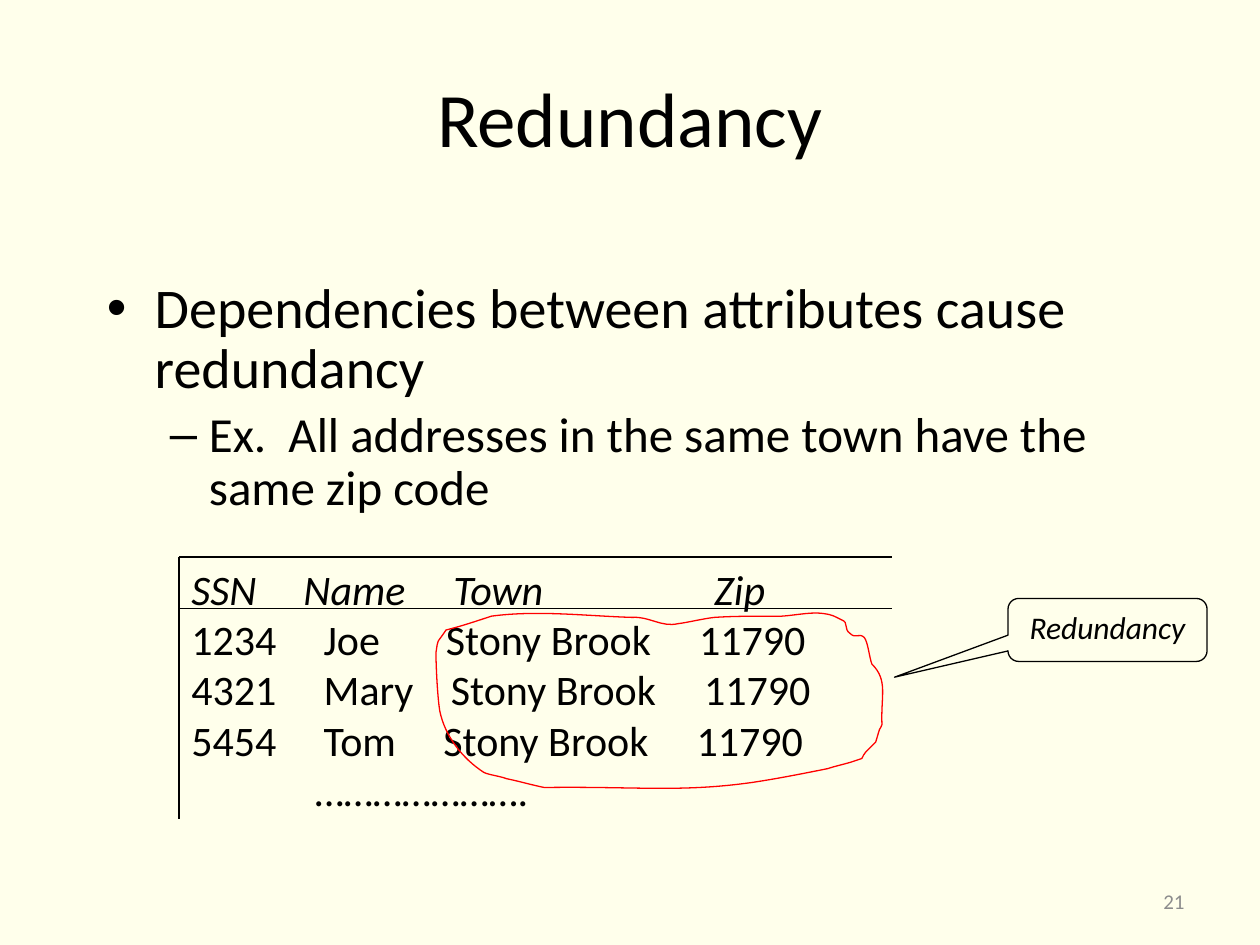
from typing import NamedTuple

from lxml import etree
from pptx import Presentation
from pptx.dml.color import RGBColor
from pptx.enum.shapes import MSO_CONNECTOR, MSO_SHAPE
from pptx.enum.text import MSO_ANCHOR, PP_ALIGN
from pptx.oxml.ns import qn
from pptx.util import Inches, Pt

BLACK = RGBColor(0x00, 0x00, 0x00)
GRAY = RGBColor(0x8C, 0x8C, 0x8C)
RED = RGBColor(0xFF, 0x00, 0x00)
CREAM = RGBColor(0xFF, 0xFF, 0xEB)
FONT = "Calibri"
LINE_WIDTH = Pt(0.75)

TABLE_LEFT, TABLE_RIGHT = 1.42, 7.08
TABLE_TOP, HEADER_BOTTOM, TABLE_BOTTOM = 4.42, 4.83, 6.5


class Bullet(NamedTuple):
    text: str
    symbol: str
    size: int
    margin: float
    hanging: float
    level: int


class Row(NamedTuple):
    text: str
    stops: tuple
    italic: bool = False


class Rule(NamedTuple):
    left: float
    top: float
    right: float
    bottom: float


BULLETS = [
    Bullet("Dependencies between attributes cause redundancy", "•", 32, 0.38, 0.38, 0),
    Bullet("Ex.  All addresses in the same town have the same zip code", "–", 28, 0.81, 0.31, 1),
]

ROWS = [
    Row("SSN\tName\tTown\tZip", (0.89, 2.08, 4.15), italic=True),
    Row("1234\tJoe\tStony Brook\t11790", (1.05, 2.02, 4.03)),
    Row("4321\tMary\tStony Brook\t11790", (1.05, 2.06, 4.07)),
    Row("5454\tTom\tStony Brook\t11790", (1.05, 2.0, 4.01)),
    Row("\t………………….", (0.98,)),
]

RULES = [
    Rule(TABLE_LEFT, HEADER_BOTTOM, TABLE_RIGHT, HEADER_BOTTOM),
    Rule(TABLE_LEFT, TABLE_TOP, TABLE_LEFT, TABLE_BOTTOM),
    Rule(TABLE_LEFT, TABLE_TOP, TABLE_RIGHT, TABLE_TOP),
]

# Each curve gives two control points and an end point.
LOOP_START = (6.92, 5.27)
LOOP_CURVES = [
    ((6.9, 5.22), (6.89, 5.1), (6.86, 5.06)),
    ((6.82, 5.02), (6.79, 5.07), (6.75, 5.03)),
    ((6.69, 4.99), (6.74, 4.94), (6.68, 4.92)),
    ((6.62, 4.89), (6.61, 4.88), (6.54, 4.87)),
    ((6.42, 4.85), (6.25, 4.9), (6.13, 4.89)),
    ((5.98, 4.89), (5.81, 4.89), (5.67, 4.9)),
    ((5.58, 4.91), (5.46, 4.94), (5.38, 4.95)),
    ((5.25, 4.98), (5.15, 4.89), (5.02, 4.9)),
    ((4.67, 4.89), (4.27, 4.84), (3.9, 4.89)),
    ((3.78, 4.93), (3.66, 4.97), (3.54, 5)),
    ((3.46, 5.12), (3.48, 5.06), (3.46, 5.18)),
    ((3.46, 5.26), (3.47, 5.51), (3.49, 5.64)),
    ((3.53, 5.84), (3.67, 6.02), (3.84, 6.13)),
    ((3.88, 6.15), (3.97, 6.16), (4.02, 6.18)),
    ((4.12, 6.2), (4.22, 6.23), (4.32, 6.25)),
    ((5.05, 6.24), (5.4, 6.29), (5.97, 6.21)),
    ((6.17, 6.18), (6.37, 6.14), (6.57, 6.1)),
    ((6.63, 6.08), (6.68, 6.07), (6.75, 6.05)),
    ((6.78, 6.04), (6.84, 6.02), (6.84, 6.02)),
    ((6.85, 6), (6.86, 5.98), (6.87, 5.97)),
    ((6.9, 5.94), (6.95, 5.89), (6.95, 5.89)),
    ((6.96, 5.86), (6.97, 5.82), (6.98, 5.79)),
    ((6.99, 5.78), (7, 5.75), (7, 5.75)),
    ((6.99, 5.52), (7.05, 5.4), LOOP_START),
]


def write(paragraph, text: str, *, size: int, color=BLACK, italic=False, align=PP_ALIGN.LEFT):
    paragraph.alignment = align
    run = paragraph.add_run()
    run.text = text
    run.font.name = FONT
    run.font.size = Pt(size)
    run.font.italic = italic
    run.font.color.rgb = color


def add_text_frame(slide, left: float, top: float, width: float, height: float):
    box = slide.shapes.add_textbox(Inches(left), Inches(top), Inches(width), Inches(height))
    box.text_frame.word_wrap = True
    return box.text_frame


def next_paragraph(text_frame, index: int):
    return text_frame.add_paragraph() if index else text_frame.paragraphs[0]


def add_bullets(slide) -> None:
    text_frame = add_text_frame(slide, 0.75, 2.17, 8.5, 2.25)
    for index, bullet in enumerate(BULLETS):
        paragraph = next_paragraph(text_frame, index)
        write(paragraph, bullet.text, size=bullet.size)
        paragraph.level = bullet.level
        paragraph.line_spacing = 0.9
        paragraph.space_before = Pt(bullet.size * 0.2)
        properties = paragraph._p.get_or_add_pPr()
        properties.set("marL", str(Inches(bullet.margin)))
        properties.set("indent", str(-Inches(bullet.hanging)))
        etree.SubElement(properties, qn("a:buFont"), typeface="Arial")
        etree.SubElement(properties, qn("a:buChar"), char=bullet.symbol)


def add_rows(slide) -> None:
    text_frame = add_text_frame(slide, TABLE_LEFT, TABLE_TOP, 5.28, 2.1)
    for index, row in enumerate(ROWS):
        paragraph = next_paragraph(text_frame, index)
        write(paragraph, row.text, size=24, italic=row.italic)
        tab_list = etree.SubElement(paragraph._p.get_or_add_pPr(), qn("a:tabLst"))
        for stop in row.stops:
            etree.SubElement(tab_list, qn("a:tab"), pos=str(Inches(stop)), algn="l")


def add_rule(slide, rule: Rule) -> None:
    connector = slide.shapes.add_connector(
        MSO_CONNECTOR.STRAIGHT, *(Inches(value) for value in rule))
    connector.line.color.rgb = BLACK
    connector.line.width = LINE_WIDTH
    etree.SubElement(connector._element.spPr, qn("a:effectLst"))


def outline(shape, color: RGBColor) -> None:
    shape.shadow.inherit = False
    shape.fill.background()
    shape.line.color.rgb = color
    shape.line.width = LINE_WIDTH


def add_loop(slide) -> None:
    """Draw the closed loop, turning each three line segments into one Bezier curve."""
    builder = slide.shapes.build_freeform(*map(Inches, LOOP_START))
    builder.add_line_segments(
        [tuple(map(Inches, point)) for curve in LOOP_CURVES for point in curve], close=True)
    loop = builder.convert_to_shape()
    segments = list(loop._element.iter(qn("a:lnTo")))
    for first, second, third in zip(segments[::3], segments[1::3], segments[2::3]):
        first.tag = qn("a:cubicBezTo")
        for segment in (second, third):
            first.append(segment[0])
            segment.getparent().remove(segment)
    outline(loop, RED)


def add_callout(slide) -> None:
    callout = slide.shapes.add_shape(
        MSO_SHAPE.ROUNDED_RECTANGULAR_CALLOUT, Inches(8), Inches(4.75), Inches(1.58), Inches(0.5))
    for index, value in enumerate((-1.07, 0.75, 0.17)):
        callout.adjustments[index] = value
    outline(callout, BLACK)
    callout.text_frame.vertical_anchor = MSO_ANCHOR.TOP
    write(callout.text_frame.paragraphs[0], "Redundancy", size=18, italic=True,
          align=PP_ALIGN.CENTER)


def main() -> None:
    presentation = Presentation()
    presentation.slide_width, presentation.slide_height = Inches(10), Inches(7.5)
    slide = presentation.slides.add_slide(presentation.slide_layouts[5])
    slide.background.fill.solid()
    slide.background.fill.fore_color.rgb = CREAM

    number_frame = add_text_frame(slide, 7.17, 6.95, 2.33, 0.4)
    number_frame.vertical_anchor = MSO_ANCHOR.MIDDLE
    write(number_frame.paragraphs[0], "21", size=12, color=GRAY, align=PP_ALIGN.RIGHT)

    title = slide.shapes.title
    title.left, title.top, title.width, title.height = map(Inches, (0.5, 0.3, 9, 1.25))
    title.text_frame.vertical_anchor = MSO_ANCHOR.MIDDLE
    write(title.text_frame.paragraphs[0], "Redundancy", size=44, align=PP_ALIGN.CENTER)

    add_bullets(slide)
    add_rows(slide)
    for rule in RULES:
        add_rule(slide, rule)
    add_loop(slide)
    add_callout(slide)
    presentation.save("out.pptx")


if __name__ == "__main__":
    main()
